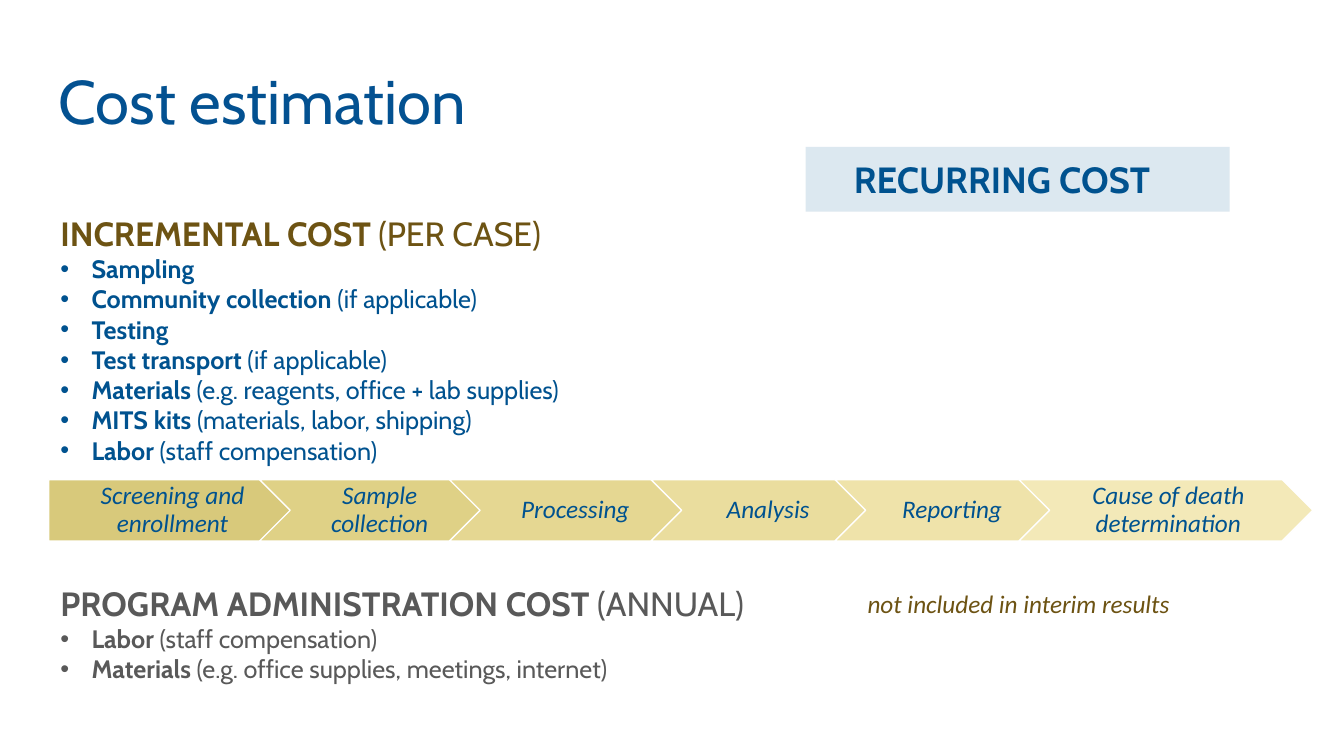
from collections import namedtuple

from lxml.etree import SubElement
from pptx import Presentation
from pptx.dml.color import RGBColor
from pptx.enum.shapes import MSO_SHAPE as Shape
from pptx.enum.text import MSO_ANCHOR as Anchor, PP_ALIGN as Align
from pptx.oxml.ns import qn
from pptx.util import Inches, Pt

COLUMNS, ROWS = 160, 90
WIDTH, HEIGHT = Inches(13.33), Inches(7.5)
BLUE, BROWN, GREY = "00528F", "6D5313", "595959"
Box = namedtuple("Box", "left top width height")

INCREMENTAL = [
    ("Sampling", ""),
    ("Community collection ", "(if applicable)"),
    ("Testing", ""),
    ("Test transport ", "(if applicable)"),
    ("Materials ", "(e.g. reagents, office + lab supplies)"),
    ("MITS kits ", "(materials, labor, shipping)"),
    ("Labor ", "(staff compensation)"),
]
ADMINISTRATION = [
    ("Labor ", "(staff compensation)"),
    ("Materials ", "(e.g. office supplies, meetings, internet)"),
]
STEPS = [
    ("Screening and enrollment", 30.5, "D8C97B"),
    ("Sample collection", 28, "DFD186"),
    ("Processing", 29.4, "E5D792"),
    ("Analysis", 27.3, "EADD9E"),
    ("Reporting", 27.3, "EFE3AA"),
    ("Cause of death determination", 35, "F3E9B8"),
]


def color(value):
    return RGBColor.from_string(value)


def place(box):
    return (int(WIDTH * box.left / COLUMNS), int(HEIGHT * box.top / ROWS),
            int(WIDTH * box.width / COLUMNS), int(HEIGHT * box.height / ROWS))


def style(font, size, tint, name="Cabin", bold=False, italic=False):
    font.size, font.name, font.bold, font.italic = Pt(size), name, bold, italic
    font.color.rgb = color(tint)


def add_bullet(paragraph):
    properties = paragraph._p.get_or_add_pPr()
    properties.set("marL", str(Inches(0.31)))
    properties.set("indent", str(-Inches(0.31)))
    SubElement(properties, qn("a:buFont"), typeface="Arial")
    SubElement(properties, qn("a:buChar"), char="•")


def add_block(shapes, box, kind, fill):
    shape = shapes.add_shape(kind, *place(box))
    shape.shadow.inherit = False
    shape.fill.solid()
    shape.fill.fore_color.rgb = color(fill)
    shape.text_frame.word_wrap = True
    shape.text_frame.vertical_anchor = Anchor.MIDDLE
    return shape


def add_title(slide, box):
    title = slide.shapes.title
    title.left, title.top, title.width, title.height = place(box)
    frame = title.text_frame
    frame.text = "Cost estimation"
    frame.vertical_anchor = Anchor.MIDDLE
    paragraph = frame.paragraphs[0]
    paragraph.alignment, paragraph.line_spacing = Align.LEFT, 0.9
    style(paragraph.runs[0].font, 44, "035191")


def add_banner(slide, box):
    banner = add_block(slide.shapes, box, Shape.RECTANGLE, "CCDDE9")
    tint = banner._element.spPr.find(qn("a:solidFill"))[0]
    SubElement(tint, qn("a:alpha"), val="67000")
    banner.line.fill.background()
    banner.text_frame.text = "RECURRING COST"
    paragraph = banner.text_frame.paragraphs[0]
    paragraph.alignment = Align.LEFT
    paragraph._p.get_or_add_pPr().set("marL", str(Inches(0.38)))
    style(paragraph.runs[0].font, 26, BLUE, bold=True)


def add_cost_list(slide, box, heading, heading_tint, items, item_tint):
    frame = slide.shapes.add_textbox(*place(box)).text_frame
    frame.word_wrap = True
    for index, (strong, plain) in enumerate([heading] + items):
        paragraph = frame.add_paragraph() if index else frame.paragraphs[0]
        size, tint = (18, item_tint) if index else (24, heading_tint)
        if index:
            add_bullet(paragraph)
        for text, bold in ((strong, True), (plain, False)):
            if text:
                run = paragraph.add_run()
                run.text = text
                style(run.font, size, tint, bold=bold)


def add_process(slide, box):
    overlap = 5.4
    left = box.left
    for index, (label, width, fill) in enumerate(STEPS):
        kind = Shape.CHEVRON if index else Shape.PENTAGON
        step = add_block(slide.shapes, Box(left, box.top, width, box.height), kind, fill)
        step.line.color.rgb = color("FFFFFF")
        step.line.width = Pt(1)
        frame = step.text_frame
        frame.margin_left = Inches(0.08 if index else 0.1)
        frame.margin_right = Inches(0.03)
        frame.text = label
        paragraph = frame.paragraphs[0]
        paragraph.alignment, paragraph.line_spacing = Align.CENTER, 0.9
        style(paragraph.runs[0].font, 18, BLUE, "Calibri", italic=True)
        left += width - overlap


def add_remark(slide, box):
    frame = slide.shapes.add_textbox(*place(box)).text_frame
    frame.word_wrap = True
    frame.text = "not included in interim results"
    style(frame.paragraphs[0].runs[0].font, 18, BROWN, "Calibri", italic=True)


def main():
    presentation = Presentation()
    presentation.slide_width, presentation.slide_height = WIDTH, HEIGHT
    slide = presentation.slides.add_slide(presentation.slide_layouts[5])
    add_title(slide, Box(5.8, 4.6, 138, 15.7))
    add_cost_list(slide, Box(6, 24.8, 148, 31.4), ("INCREMENTAL COST ", "(PER CASE)"),
                  BROWN, INCREMENTAL, BLUE)
    add_cost_list(slide, Box(6, 68.8, 96, 14.6), ("PROGRAM ADMINISTRATION COST ", "(ANNUAL)"),
                  GREY, ADMINISTRATION, GREY)
    add_remark(slide, Box(102.1, 69.5, 48.6, 4.8))
    add_process(slide, Box(5.8, 57.1, 150.5, 7.3))
    add_banner(slide, Box(95.9, 17.5, 50.5, 7.7))
    presentation.save("out.pptx")


if __name__ == "__main__":
    main()
